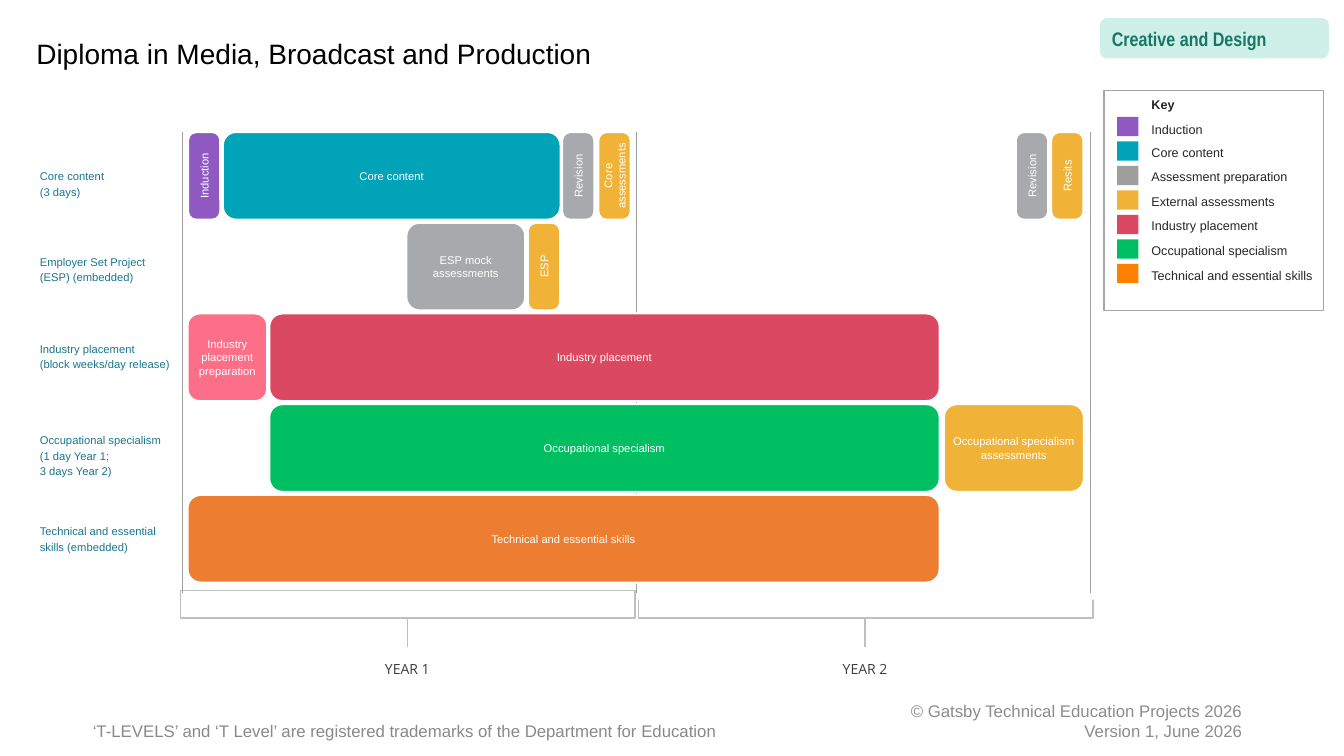
from pptx import Presentation
from pptx.dml.color import RGBColor
from pptx.enum.shapes import MSO_CONNECTOR, MSO_SHAPE
from pptx.enum.text import MSO_ANCHOR, MSO_AUTO_SIZE, PP_ALIGN
from pptx.util import Inches, Pt
from lxml import etree

RECT, ROUND = MSO_SHAPE.RECTANGLE, MSO_SHAPE.ROUNDED_RECTANGLE
LEFT, CENTER, RIGHT = PP_ALIGN.LEFT, PP_ALIGN.CENTER, PP_ALIGN.RIGHT
TOP, MIDDLE = MSO_ANCHOR.TOP, MSO_ANCHOR.MIDDLE
STRAIGHT = MSO_CONNECTOR.STRAIGHT


class Theme:
    font, narrow, year_font = "Arial", "Arial Narrow", "Open Sans"
    title, tag, footer, year, key, small = 20, 14, 12, 10, 9, 8
    white, black, ink, year_ink = "FFFFFF", "000000", "262626", "3C3C3B"
    label, tag_ink, tag_fill = "1A768D", "167765", "CFEFE9"
    trademark, rights = "898989", "8C8C8C"
    bracket, rule, frame = "BFBFBF", "9E9E9D", "A6A6A6"
    induction, core, prep, prep_key = "9059C2", "00A3B7", "A7A9AC", "9E9E9D"
    exam, placement, placement_prep = "F0B337", "DB4862", "FD6F88"
    specialism, skills, skills_key = "00BF63", "ED7D31", "FF7F00"


prs = Presentation()
prs.slide_width, prs.slide_height = Inches(13.33), Inches(7.5)
COL, ROW = prs.slide_width / 1333, prs.slide_height / 750
s = prs.slides.add_slide(prs.slide_layouts[5])


def add_box(kind, left, top, width, height, fill=None, line=None, weight=1):
    sp = s.shapes.add_shape(kind, int(left * COL), int(top * ROW), int(width * COL), int(height * ROW))
    sp.shadow.inherit = False
    if fill:
        sp.fill.solid()
        sp.fill.fore_color.rgb = RGBColor.from_string(fill)
    else:
        sp.fill.background()
    if line:
        sp.line.color.rgb = RGBColor.from_string(line)
        sp.line.width = Pt(weight)
    else:
        sp.line.fill.background()
    return sp


def write(sp, lines, size, color, font=Theme.font, align=LEFT, anchor=TOP,
          inset=(0, 0, 0, 0), spacing=1.0, before=0, bold=False):
    tf = sp.text_frame
    sides = ("margin_left", "margin_top", "margin_right", "margin_bottom")
    frame = {"word_wrap": True, "auto_size": MSO_AUTO_SIZE.NONE, "vertical_anchor": anchor}
    frame.update((side, Inches(value)) for side, value in zip(sides, inset))
    for name, value in frame.items():
        setattr(tf, name, value)
    for i, text in enumerate(lines):
        p = tf.add_paragraph() if i else tf.paragraphs[0]
        for name, value in {"alignment": align, "line_spacing": spacing,
                            "space_before": Pt(before if i else 0)}.items():
            setattr(p, name, value)
        r = p.add_run()
        r.text = text
        for name, value in {"name": font, "size": Pt(size), "bold": bold}.items():
            setattr(r.font, name, value)
        r.font.color.rgb = RGBColor.from_string(color)


PAD = (0.1, 0.05, 0.1, 0.05)

title = s.shapes.title
for name, value in {"left": 26 * COL, "top": 31 * ROW, "width": 987 * COL, "height": 44 * ROW}.items():
    setattr(title, name, int(value))
write(title, ["Diploma in Media, Broadcast and Production"], Theme.title, Theme.black, inset=PAD)

YEAR_STARTS, YEAR_MIDS = (179, 633), (404, 858)
for left in YEAR_STARTS:
    add_box(RECT, left, 586, 451, 27, line=Theme.bracket)
add_box(RECT, 631, 578, 457, 17, fill=Theme.white)

rules = [(x, 612, 642, Theme.bracket, 1) for x in YEAR_MIDS]
rules += [(x, 131, 588, Theme.rule, 0.75) for x in (631, 181, 1082)]
for x, start, end, color, weight in rules:
    c = s.shapes.add_connector(STRAIGHT, int(x * COL), int(start * ROW), int(x * COL), int(end * ROW))
    c.line.color.rgb = RGBColor.from_string(color)
    c.line.width = Pt(weight)
    etree.SubElement(c.line._get_or_add_ln().getparent(),
                     "{http://schemas.openxmlformats.org/drawingml/2006/main}effectLst")

for number, mid in enumerate(YEAR_MIDS, 1):
    write(add_box(RECT, mid - 33, 655, 66, 14), [f"YEAR {number}"], Theme.year, Theme.year_ink,
          font=Theme.year_font, align=CENTER, spacing=1.02)

tag = add_box(ROUND, 1091, 18, 227, 40, fill=Theme.tag_fill)
write(tag, ["Creative and Design"], Theme.tag, Theme.tag_ink, font=Theme.narrow,
      anchor=MIDDLE, inset=PAD, bold=True)

trademark = add_box(RECT, 92, 715, 681, 20)
write(trademark, ["‘T-LEVELS’ and ‘T Level’ are registered trademarks of the Department for Education"],
      Theme.footer, Theme.trademark)
rights = add_box(RECT, 883, 695, 359, 40)
write(rights, ["© Gatsby Technical Education Projects 2026", "Version 1, June 2026"],
      Theme.footer, Theme.rights, align=RIGHT, anchor=MIDDLE, inset=PAD)

labels = [
    (166, ["Core content", "(3 days)"]),
    (251, ["Employer Set Project (ESP) (embedded)"]),
    (337, ["Industry placement", "(block weeks/day release)"]),
    (428, ["Occupational specialism", "(1 day Year 1;", "3 days Year 2)"]),
    (518, ["Technical and essential skills (embedded)"]),
]
for top, lines in labels:
    write(add_box(RECT, 39.5, top, 136 if top == 337 else 122, 31), lines, Theme.small, Theme.label, spacing=1.16)

BAR_TOP, BAR_PITCH, BAR_HEIGHT, UPRIGHT = 131, 90, 87, 32
bars = [
    (0, 186.5, UPRIGHT, "Induction", Theme.induction),
    (0, 221, 335, "Core content", Theme.core),
    (0, 557.5, UPRIGHT, "Revision", Theme.prep),
    (0, 593.5, UPRIGHT, "Core assessments", Theme.exam),
    (0, 1007.5, UPRIGHT, "Revision", Theme.prep),
    (0, 1042.5, UPRIGHT, "Resits", Theme.exam),
    (1, 403, 118, "ESP mock assessments", Theme.prep),
    (1, 523.5, UPRIGHT, "ESP", Theme.exam),
    (2, 186, 79, "Industry placement preparation", Theme.placement_prep),
    (2, 267, 665, "Industry placement", Theme.placement),
    (3, 267, 665, "Occupational specialism", Theme.specialism),
    (3, 936, 139, "Occupational specialism assessments", Theme.exam),
    (4, 186, 746, "Technical and essential skills", Theme.skills),
]
for row, left, width, text, color in bars:
    top, height = BAR_TOP + row * BAR_PITCH, BAR_HEIGHT
    upright = width == UPRIGHT
    if upright:
        shift = (height - width) / 2
        left, top, width, height = left - shift, top + shift, height, width
    bar = add_box(ROUND, left, top, width, height, color, Theme.white, 1.5)
    bar.rotation = 270 if upright else 0
    bar.adjustments[0] = 0.25 if upright else 0.15
    write(bar, [text], Theme.small, Theme.white, align=CENTER, anchor=MIDDLE, inset=(0.04, 0.05, 0.04, 0.05))

key = {
    "Induction": Theme.induction,
    "Core content": Theme.core,
    "Assessment preparation": Theme.prep_key,
    "External assessments": Theme.exam,
    "Industry placement": Theme.placement,
    "Occupational specialism": Theme.specialism,
    "Technical and essential skills": Theme.skills_key,
}
key_box = add_box(RECT, 1095, 90, 218, 218, line=Theme.frame)
write(key_box, ["Key", *key], Theme.key, Theme.ink, inset=(0.47, 0.05, 0.1, 0.05), spacing=1.08, before=6)
paragraphs = key_box.text_frame.paragraphs
paragraphs[0].runs[0].font.bold = True
for p in paragraphs[2:4]:
    p.line_spacing = 1.0
for i, color in enumerate(key.values()):
    add_box(RECT, 1108, 116 + 24.3 * i, 21, 19, fill=color)

prs.save("out.pptx")
